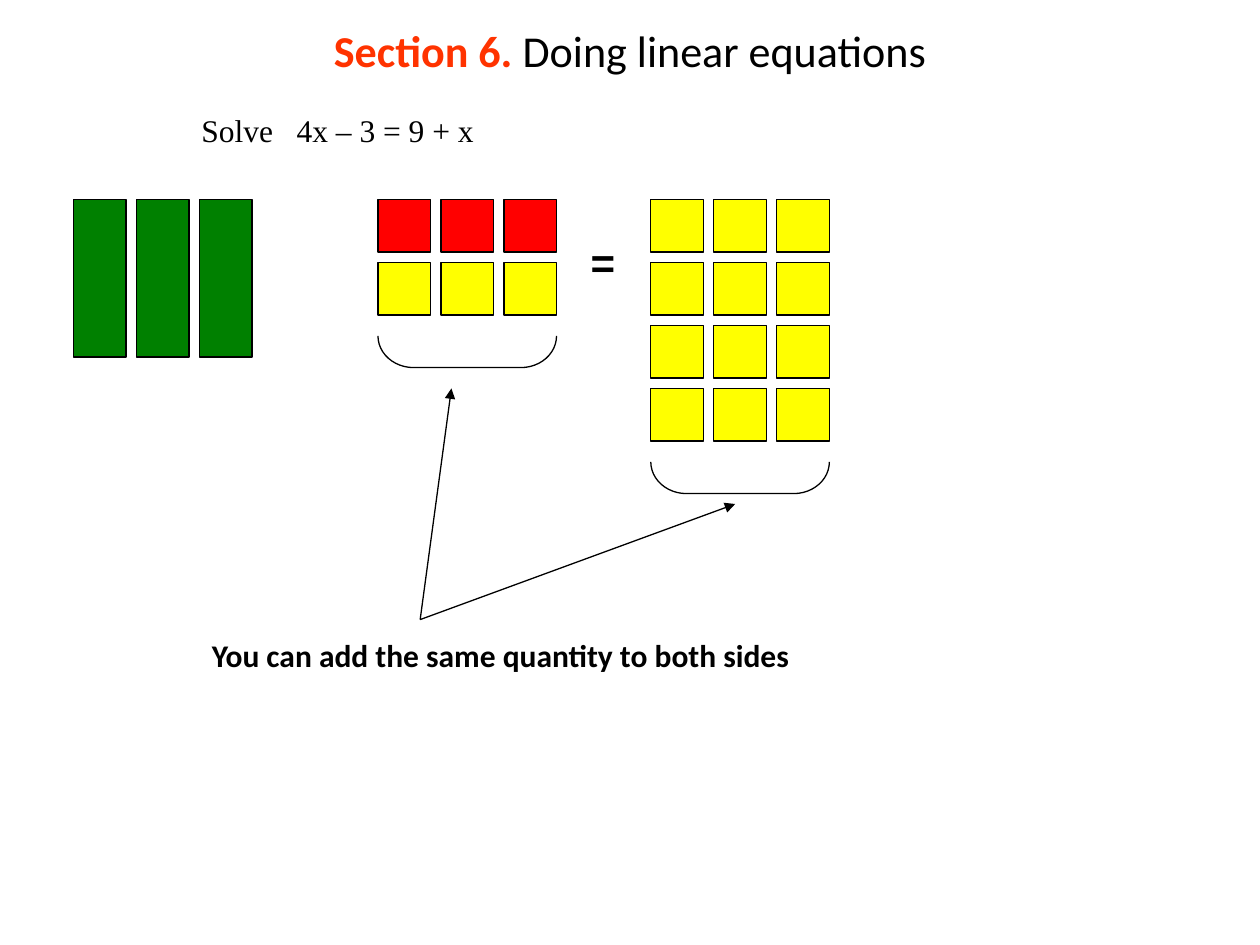
import dataclasses

import pptx
import pptx.dml.color
import pptx.enum.shapes
import pptx.enum.text
import pptx.oxml.ns
import pptx.util
from lxml import etree

Cm = pptx.util.Cm
Pt = pptx.util.Pt
Align = pptx.enum.text.PP_ALIGN
Fit = pptx.enum.text.MSO_AUTO_SIZE
Preset = pptx.enum.shapes.MSO_SHAPE
qn = pptx.oxml.ns.qn


@dataclasses.dataclass(frozen=True)
class Theme:
    ink: str = "000000"
    accent: str = "FF3300"
    unknown: str = "008000"
    negative: str = "FF0000"
    positive: str = "FFFF00"
    sans: str = "Calibri"
    serif: str = "Times New Roman"
    symbol: str = "Arial"
    title_size: float = 25.2
    sign_size: float = 24
    body_size: float = 18
    stroke: float = 0.75
    tile: float = 1.06
    pitch: float = 1.27


class TileSlide:
    """Draw algebra tiles, labels and pointers on one slide in one theme."""

    def __init__(self, page, theme):
        self.page = page
        self.theme = theme

    def span(self, para, text, size, font, color=None, bold=False, italic=False):
        span = para.add_run()
        span.text = text
        span.font.size = Pt(size)
        span.font.name = font
        span.font.bold = bold
        span.font.italic = italic
        span.font.color.rgb = pptx.dml.color.RGBColor.from_string(color or self.theme.ink)

    def title(self, lead, rest, left, top, width, height):
        box = self.page.shapes.title
        box.left, box.top, box.width, box.height = map(Cm, (left, top, width, height))
        box.text_frame.auto_size = Fit.NONE
        box.text_frame.vertical_anchor = pptx.enum.text.MSO_ANCHOR.MIDDLE
        para = box.text_frame.paragraphs[0]
        para.alignment = Align.CENTER
        size, font = self.theme.title_size, self.theme.sans
        self.span(para, lead, size, font, self.theme.accent, bold=True)
        self.span(para, rest, size, font)
        para.add_line_break()
        para.font.size = Pt(size)

    def label(self, text, left, top, width, height, size, font,
              align=Align.LEFT, wrap=True, tab=None, **style):
        box = self.page.shapes.add_textbox(Cm(left), Cm(top), Cm(width), Cm(height))
        box.text_frame.word_wrap = wrap
        box.text_frame.auto_size = Fit.SHAPE_TO_FIT_TEXT
        para = box.text_frame.paragraphs[0]
        para.alignment = align
        if tab:
            stops = etree.SubElement(para._p.get_or_add_pPr(), qn("a:tabLst"))
            etree.SubElement(stops, qn("a:tab"), pos=str(Cm(tab)), algn="l")
        self.span(para, text, size, font, **style)

    def outline(self, line):
        line.color.rgb = pptx.dml.color.RGBColor.from_string(self.theme.ink)
        line.width = Pt(self.theme.stroke)

    def tiles(self, left, top, color, rows=1, columns=3, height=None, grouped=False):
        shapes = self.page.shapes
        if grouped:
            shapes = shapes.add_group_shape().shapes
        side, pitch = self.theme.tile, self.theme.pitch
        for row in range(rows):
            for column in range(columns):
                tile = shapes.add_shape(
                    Preset.RECTANGLE, Cm(left + column * pitch), Cm(top + row * pitch),
                    Cm(side), Cm(height or side))
                tile.shadow.inherit = False
                tile.fill.solid()
                tile.fill.fore_color.rgb = pptx.dml.color.RGBColor.from_string(color)
                self.outline(tile.line)

    def bracket(self, left, top, width, depth):
        shape = self.page.shapes.add_shape(
            Preset.LEFT_BRACKET, Cm(left + (width - depth) / 2),
            Cm(top - (width - depth) / 2), Cm(depth), Cm(width))
        shape.rotation = 270
        shape.adjustments[0] = 1.122
        shape.shadow.inherit = False
        shape.fill.background()
        self.outline(shape.line)

    def arrow(self, start, end):
        arrow = self.page.shapes.add_connector(
            pptx.enum.shapes.MSO_CONNECTOR.STRAIGHT, *map(Cm, start + end))
        self.outline(arrow.line)
        etree.SubElement(arrow.line._get_or_add_ln(), qn("a:tailEnd"), type="triangle")
        etree.SubElement(arrow._element.spPr, qn("a:effectLst"))


def main():
    deck = pptx.Presentation()
    deck.slide_width, deck.slide_height = Cm(25.4), Cm(19.05)
    theme = Theme()
    slide = TileSlide(deck.slides.add_slide(deck.slide_layouts[5]), theme)
    top, middle, right = 4.02, 7.62, 13.12
    pitch = theme.pitch

    slide.title("Section 6.", " Doing linear equations", 1.27, 0.76, 22.86, 1.57)
    slide.label("=", 11.63, 4.65, 1.02, 1.27, theme.sign_size, theme.symbol,
                align=Align.CENTER, wrap=False, bold=True, italic=True)
    slide.label("Solve\t4x – 3 = 9 + x", 3.81, 2.11, 15.67, 1.02,
                theme.body_size, theme.serif, tab=1.92)

    slide.tiles(1.48, top, theme.unknown, height=3.18)
    slide.tiles(middle, top, theme.negative)
    slide.tiles(middle, top + pitch, theme.positive, grouped=True)
    slide.tiles(right, top + 3 * pitch, theme.positive, grouped=True)
    slide.tiles(right, top, theme.positive, rows=3)

    slide.label("You can add the same quantity to both sides", 4.02, 12.7, 15.67, 1.02,
                theme.body_size, theme.sans, bold=True)
    for tip in ((9.1, 7.83), (14.82, 10.16)):
        slide.arrow((8.47, 12.49), tip)
    for left, rows in ((right, 4), (middle, 2)):
        slide.bracket(left, top + rows * pitch + 0.21, 3.6, 0.64)

    deck.save("out.pptx")


if __name__ == "__main__":
    main()
